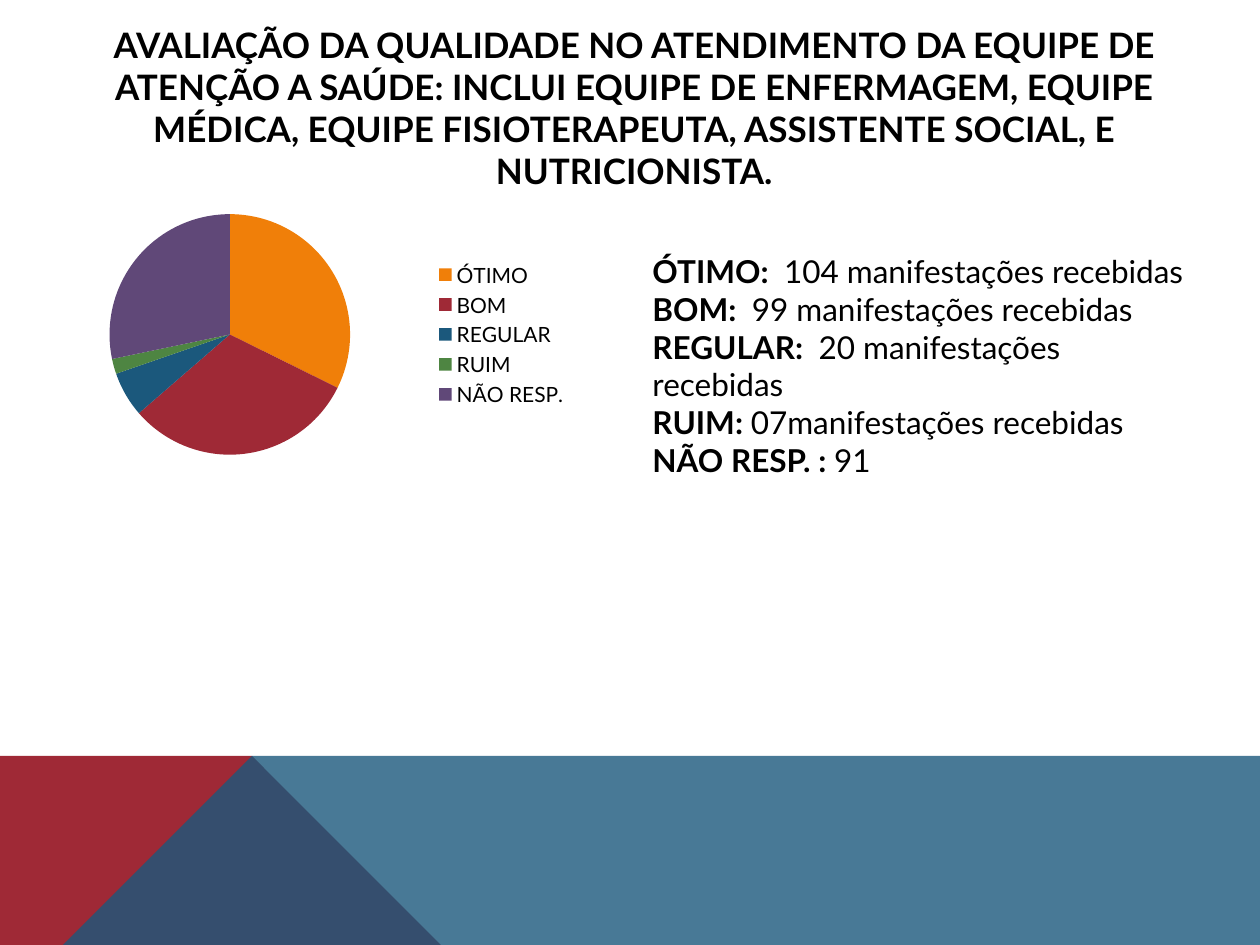
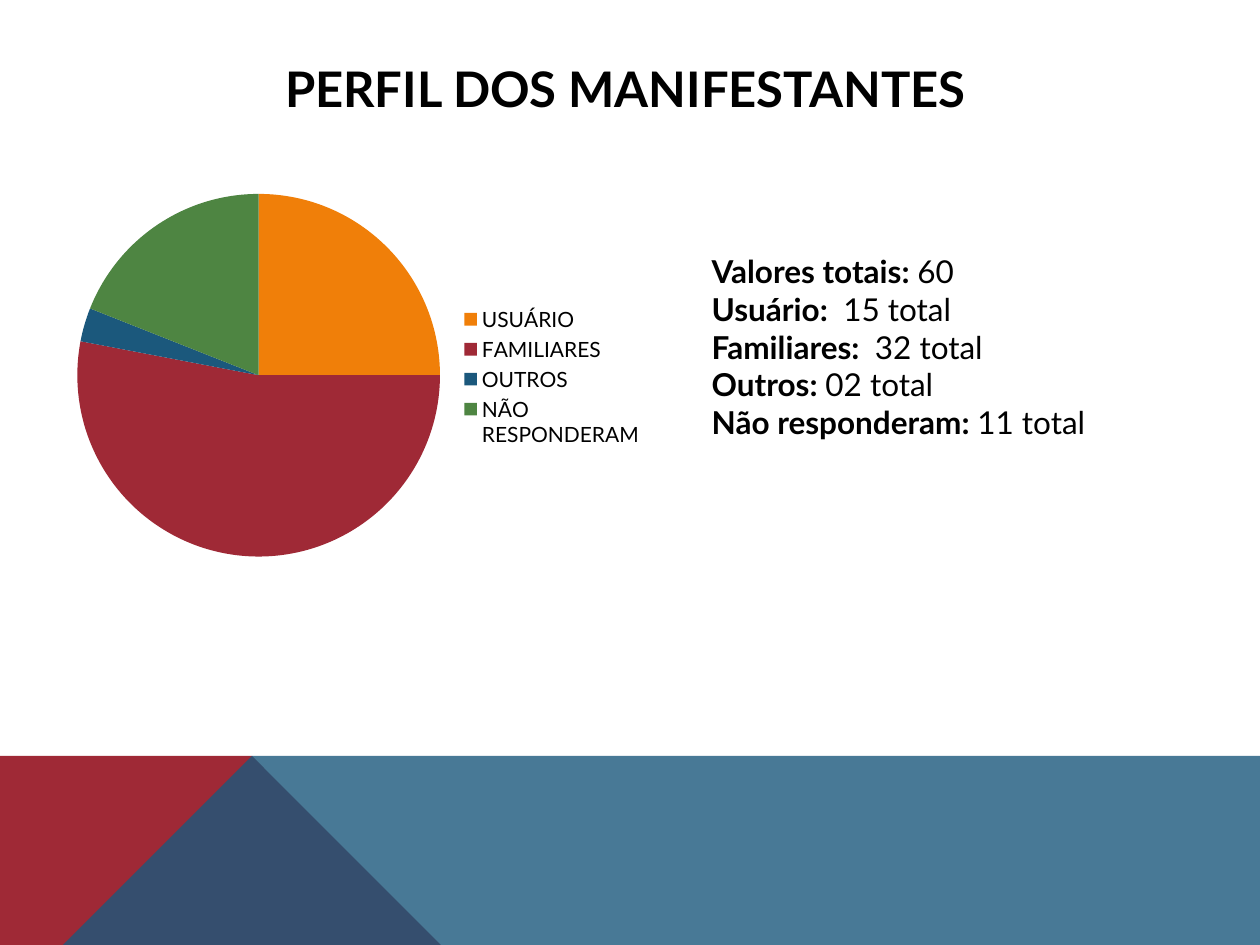
from lxml import etree
from pptx import Presentation
from pptx.chart.data import CategoryChartData
from pptx.dml.color import RGBColor
from pptx.enum.chart import XL_CHART_TYPE, XL_LEGEND_POSITION
from pptx.enum.text import MSO_ANCHOR, MSO_AUTO_SIZE, PP_ALIGN
from pptx.oxml.ns import qn
from pptx.util import Inches, Pt

PIE = XL_CHART_TYPE.PIE
LEGEND_RIGHT = XL_LEGEND_POSITION.RIGHT
MIDDLE = MSO_ANCHOR.MIDDLE
NO_AUTOFIT = MSO_AUTO_SIZE.NONE
CENTER = PP_ALIGN.CENTER

BLACK = RGBColor(0x00, 0x00, 0x00)
ORANGE = RGBColor(0xF0, 0x7F, 0x09)
RED = RGBColor(0x9F, 0x29, 0x36)
BLUE = RGBColor(0x1B, 0x58, 0x7C)
GREEN = RGBColor(0x4E, 0x85, 0x42)
PURPLE = RGBColor(0x60, 0x48, 0x78)
PIE_COLORS = [ORANGE, RED, BLUE, GREEN, PURPLE]
FONT = "Lato"

# Content: boxes are left, top, width, height in inches
SLIDES = [
    {
        "title": "AVALIAÇÃO DA QUALIDADE NO ATENDIMENTO DA EQUIPE DE ATENÇÃO A SAÚDE: "
                 "INCLUI EQUIPE DE ENFERMAGEM, EQUIPE MÉDICA, EQUIPE FISIOTERAPEUTA, "
                 "ASSISTENTE SOCIAL, E NUTRICIONISTA.",
        "title_size": 20,
        "title_box": (0.31, 0.31, 9.45, 1.09),
        "results": [
            ("ÓTIMO:  ", "104 manifestações recebidas"),
            ("BOM:  ", "99 manifestações recebidas"),
            ("REGULAR:  ", "20 manifestações recebidas"),
            ("RUIM: ", "07manifestações recebidas"),
            ("NÃO RESP. : ", "91"),
        ],
        "results_box": (5.08, 1.95, 4.45, 1.92),
        "shares": {"ÓTIMO": 32, "BOM": 31, "REGULAR": 6, "RUIM": 2, "NÃO RESP.": 28},
        "chart_box": (0.23, 1.56, 4.38, 2.19),
        "pie_box": (0.87, 1.7, 1.91, 1.91),
    },
    {
        "title": "PERFIL DOS MANIFESTANTES ",
        "title_size": 28,
        "title_box": (0.9, 0.4, 8.22, 0.6),
        "results": [
            ("Valores totais: ", "60"),
            ("Usuário:  ", "15 total"),
            ("Familiares:  ", "32 total"),
            ("Outros: ", "02 total"),
            ("Não responderam: ", "11 total"),
        ],
        "results_box": (5.55, 1.95, 3.98, 1.92),
        "shares": {"USUÁRIO": 25, "FAMILIARES": 53, "OUTROS": 3, "NÃO RESPONDERAM": 19},
        "chart_box": (0.47, 1.41, 4.74, 3.16),
        "pie_box": (0.61, 1.54, 2.88, 2.88),
    },
]

# Footer bands: outline, colour, opacity in percent
BANDS = [
    ([(0, 7.5), (0, 5.52), (2.23, 5.52), (3.91, 7.5)], RED, 100),
    ([(0, 7.5), (2.23, 5.52), (10, 5.53), (10, 7.5)], BLUE, 80),
]


def inches(box):
    return [Inches(length) for length in box]


def format_font(font, size, bold=False):
    values = {"name": FONT, "size": Pt(size), "bold": bold}
    for name, value in values.items():
        setattr(font, name, value)
    font.color.rgb = BLACK


def add_bands(slide):
    for outline, color, opacity in BANDS:
        builder = slide.shapes.build_freeform(*outline[0], scale=Inches(1))
        builder.add_line_segments(outline[1:], close=True)
        band = builder.convert_to_shape()
        band.shadow.inherit = False
        band.line.fill.background()
        band.fill.solid()
        band.fill.fore_color.rgb = color
        if opacity < 100:
            color_element = band.fill._xPr.find(".//" + qn("a:srgbClr"))
            etree.SubElement(color_element, qn("a:alpha"), val=str(opacity * 1000))


def set_title(slide, text, size, box):
    title = slide.shapes.title
    title.left, title.top, title.width, title.height = inches(box)
    frame = title.text_frame
    frame.text = text
    values = {"word_wrap": True, "auto_size": NO_AUTOFIT, "vertical_anchor": MIDDLE}
    for name, value in values.items():
        setattr(frame, name, value)
    paragraph = frame.paragraphs[0]
    paragraph.alignment = CENTER
    format_font(paragraph.runs[0].font, size, bold=True)


def add_results(slide, results, box):
    frame = slide.shapes.add_textbox(*inches(box)).text_frame
    frame.word_wrap = True
    for index, (label, value) in enumerate(results):
        paragraph = frame.add_paragraph() if index else frame.paragraphs[0]
        for text, bold in ((label, True), (value, False)):
            run = paragraph.add_run()
            run.text = text
            format_font(run.font, 18, bold)


def place_pie(chart, chart_box, pie_box):
    """Fix the plot area at pie_box, as fractions of the chart frame."""
    left, top, width, height = chart_box
    pie_left, pie_top, pie_width, pie_height = pie_box
    settings = {
        "layoutTarget": "inner", "xMode": "edge", "yMode": "edge",
        "x": (pie_left - left) / width, "y": (pie_top - top) / height,
        "w": pie_width / width, "h": pie_height / height,
    }
    plot_area = chart._chartSpace.find(".//" + qn("c:plotArea"))
    layout = plot_area.find(qn("c:layout"))
    if layout is None:
        layout = etree.Element(qn("c:layout"))
        plot_area.insert(0, layout)
    manual = etree.SubElement(layout, qn("c:manualLayout"))
    for name, value in settings.items():
        text = value if isinstance(value, str) else f"{value:.3f}"
        etree.SubElement(manual, qn("c:" + name), val=text)


def add_pie(slide, shares, chart_box, pie_box):
    data = CategoryChartData()
    data.categories = list(shares)
    data.add_series("Series 1", list(shares.values()))
    chart = slide.shapes.add_chart(PIE, *inches(chart_box), data).chart
    format_font(chart.font, 18)
    chart.has_title = False
    chart.has_legend = True
    chart.legend.position = LEGEND_RIGHT
    chart.legend.include_in_layout = True
    format_font(chart.legend.font, 12)
    plot = chart.plots[0]
    plot.vary_by_categories = True
    for index, color in enumerate(PIE_COLORS[:len(shares)]):
        fill = plot.series[0].points[index].format.fill
        fill.solid()
        fill.fore_color.rgb = color
    place_pie(chart, chart_box, pie_box)


def main():
    presentation = Presentation()
    presentation.slide_width, presentation.slide_height = Inches(10), Inches(7.5)
    title_only = presentation.slide_layouts[5]
    for content in SLIDES:
        slide = presentation.slides.add_slide(title_only)
        add_bands(slide)
        set_title(slide, content["title"], content["title_size"], content["title_box"])
        add_results(slide, content["results"], content["results_box"])
        add_pie(slide, content["shares"], content["chart_box"], content["pie_box"])
    presentation.save("out.pptx")


if __name__ == "__main__":
    main()
